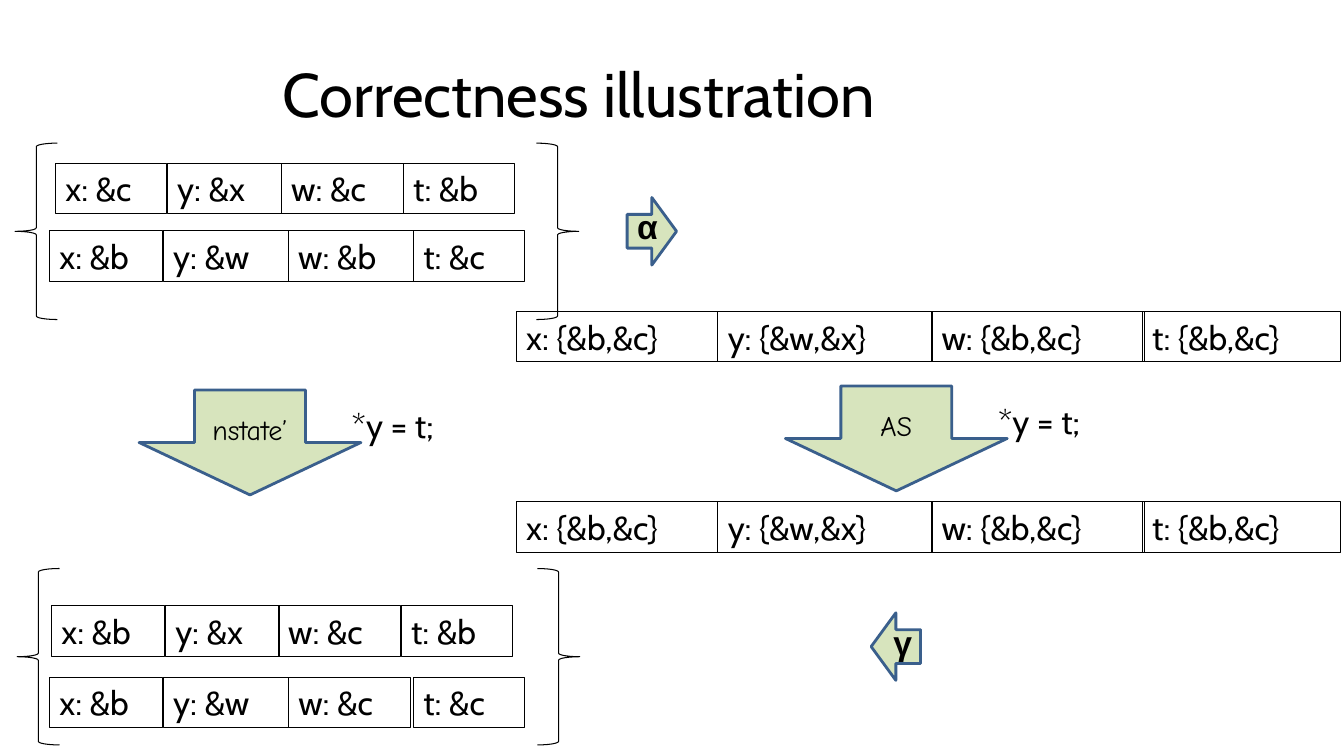
from pptx import Presentation
from pptx.dml.color import RGBColor
from pptx.enum.shapes import MSO_SHAPE
from pptx.enum.text import MSO_ANCHOR, PP_ALIGN
from pptx.util import Inches, Pt

RECTANGLE = MSO_SHAPE.RECTANGLE
LEFT_BRACE, RIGHT_BRACE = MSO_SHAPE.LEFT_BRACE, MSO_SHAPE.RIGHT_BRACE
DOWN_ARROW = MSO_SHAPE.DOWN_ARROW
LEFT_ARROW, RIGHT_ARROW = MSO_SHAPE.LEFT_ARROW, MSO_SHAPE.RIGHT_ARROW
TOP, MIDDLE = MSO_ANCHOR.TOP, MSO_ANCHOR.MIDDLE
LEFT, CENTER = PP_ALIGN.LEFT, PP_ALIGN.CENTER
TITLE_ONLY = 5

CELL = Inches(0.1)
ROW_HEIGHT = 5


def color(value):
    return RGBColor.from_string(value)


class StateSlide:
    """Draws program states and arrows on a grid of tenth-inch columns and rows."""

    ink = "000000"
    arrow_fill = "D7E4BD"
    arrow_line = "3A5F8C"
    body_font = "Cabin"
    label_font = "Comic Neue"
    symbol_font = "Arial"

    def __init__(self, presentation):
        layout = presentation.slide_layouts[TITLE_ONLY]
        self.slide = presentation.slides.add_slide(layout)

    def place(self, columns, rows, width, height):
        return [round(length * CELL) for length in (columns, rows, width, height)]

    def add_text(self, shape, text, size, font, align=LEFT, anchor=TOP, bold=False):
        frame = shape.text_frame
        frame.word_wrap = True
        frame.vertical_anchor = anchor
        paragraph = frame.paragraphs[0]
        paragraph.alignment = align
        run = paragraph.add_run()
        run.text = text
        run.font.size = Pt(size)
        run.font.name = font
        run.font.bold = bold
        run.font.color.rgb = color(self.ink)

    def title(self, text):
        shape = self.slide.shapes.title
        shape.left, shape.top, shape.width, shape.height = self.place(6.7, 3, 101.4, 12.5)
        self.add_text(shape, text, 44, self.body_font, CENTER, MIDDLE)

    def outline(self, kind, box, line, weight, fill=None):
        shape = self.slide.shapes.add_shape(kind, *self.place(*box))
        shape.shadow.inherit = False
        shape.line.color.rgb = color(line)
        shape.line.width = Pt(weight)
        if fill:
            shape.fill.solid()
            shape.fill.fore_color.rgb = color(fill)
        else:
            shape.fill.background()
        return shape

    def state(self, top, lefts, widths, values):
        for name, left, width, value in zip("xywt", lefts, widths, values):
            box = (left, top, width, ROW_HEIGHT)
            shape = self.outline(RECTANGLE, box, self.ink, 0.75)
            self.add_text(shape, f"{name}: {value}", 24, self.body_font)

    def braces(self, left, right, top):
        for kind, column in ((LEFT_BRACE, left), (RIGHT_BRACE, right)):
            self.outline(kind, (column, top, 4.2, 17.5), self.ink, 0.75)

    def step(self, left, top, label):
        caption = self.slide.shapes.add_textbox(
            *self.place(left + 20.1, top + 1, 19.2, ROW_HEIGHT))
        self.add_text(caption, "*y = t;", 24, self.body_font)
        arrow = self.outline(DOWN_ARROW, (left, top, 22, 10.4),
                             self.arrow_line, 2, self.arrow_fill)
        self.add_text(arrow, label, 20, self.label_font, CENTER, MIDDLE)

    def mapping(self, kind, left, top, symbol):
        arrow = self.outline(kind, (left, top, 4.9, 6.7),
                             self.arrow_line, 2, self.arrow_fill)
        self.add_text(arrow, symbol, 24, self.symbol_font, CENTER, MIDDLE, True)
        frame = arrow.text_frame
        frame.margin_top, frame.margin_bottom = 0, CELL


def main():
    presentation = Presentation()
    presentation.slide_width = Inches(13.33)
    presentation.slide_height = Inches(7.5)
    page = StateSlide(presentation)
    page.title("Correctness illustration")

    page.step(13.8, 38.7, "nstate’")
    lower_lefts = (4.9, 16.2, 28.6, 41)
    page.state(16.2, (5.5, 16.6, 27.9, 40), (11, 11.3, 12.1, 11),
               ("&c", "&x", "&c", "&b"))
    page.state(22.9, lower_lefts, (11.2, 12.4, 12.4, 11),
               ("&b", "&w", "&b", "&c"))
    page.braces(1.5, 53.2, 14.2)

    page.state(60.1, (5.1, 16.4, 27.6, 39.8), (11.2, 11.3, 12.1, 11),
               ("&b", "&x", "&c", "&b"))
    page.state(67.2, lower_lefts, (11.2, 12.4, 12.1, 11),
               ("&b", "&w", "&c", "&c"))
    page.braces(1.7, 53.3, 56.4)

    page.mapping(RIGHT_ARROW, 62.2, 19.6, "α")
    for top in (30.9, 49.8):
        page.state(top, (51.2, 71.2, 92.4, 113.3), (20, 21.3, 21.1, 19.7),
                   ("{&b,&c}", "{&w,&x}", "{&b,&c}", "{&b,&c}"))
    page.step(77.9, 38.3, "AS")
    page.mapping(LEFT_ARROW, 86.4, 60.8, "γ")

    presentation.save("out.pptx")


if __name__ == "__main__":
    main()
